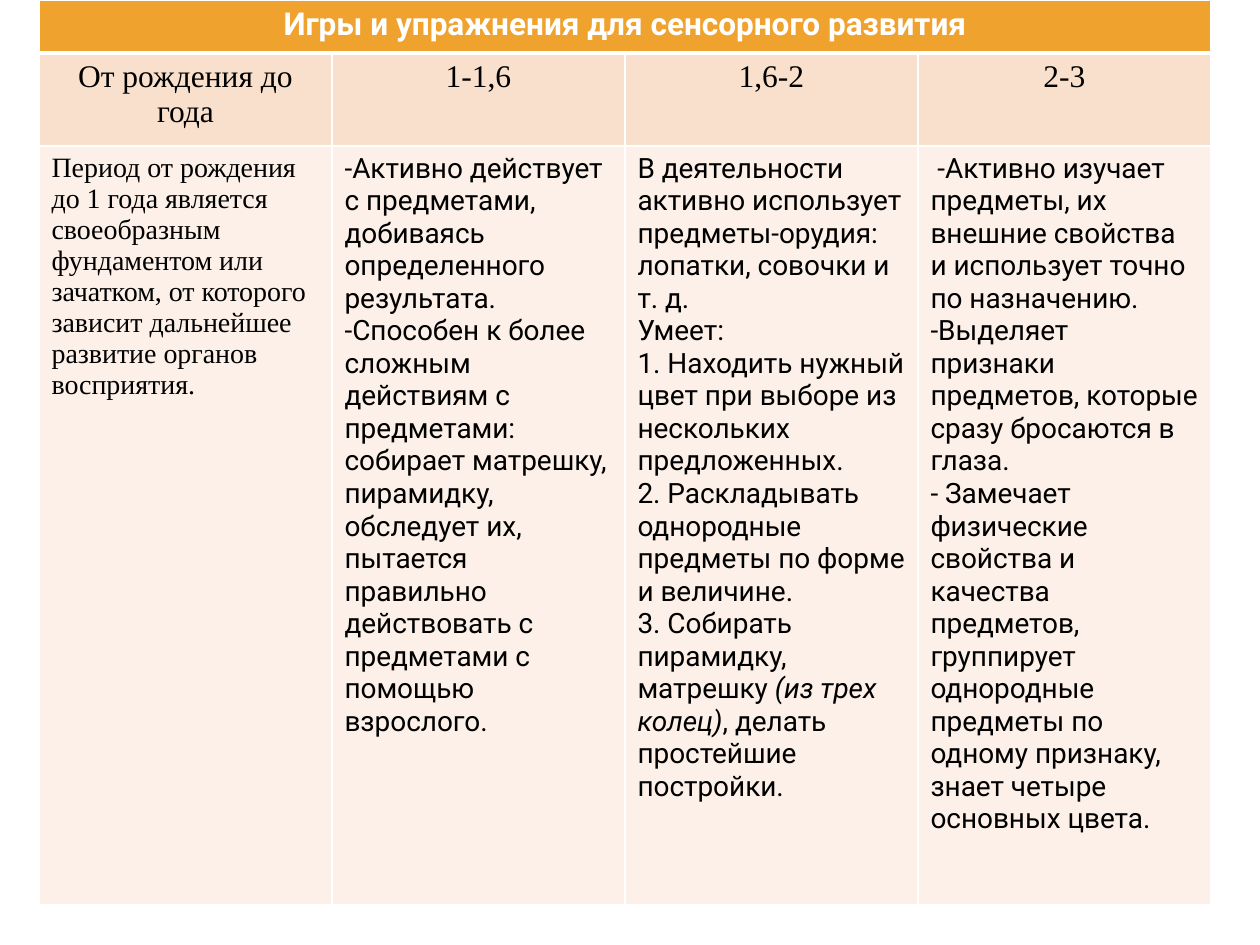
from lxml import etree
from pptx import Presentation
from pptx import util as u
from pptx.dml.color import RGBColor
from pptx.enum import text
from pptx.oxml.ns import qn

EMU_PER_PX = 914400 // 126
COLORS = {
    "white": "FFFFFF",
    "black": "000000",
    "heading": "F0A22E",
    "ages": "F9E0CD",
    "skills": "FCF0E8",
}
SANS, SERIF = "Roboto", "Times New Roman"

HEADING = "Игры и упражнения для сенсорного развития"
AGES = ["От рождения до года", "1-1,6", "1,6-2", "2-3"]
# One list of paragraphs per age; a tuple is plain, italic and plain text.
SKILLS = [
    ["Период от рождения до 1 года является своеобразным фундаментом или "
     "зачатком, от которого зависит дальнейшее развитие органов восприятия."],
    ["-Активно действует с предметами, добиваясь определенного результата.",
     "-Способен к более сложным действиям с предметами: собирает матрешку, "
     "пирамидку, обследует их, пытается правильно действовать с предметами "
     "с помощью взрослого."],
    ["В деятельности активно использует предметы-орудия: лопатки, совочки и т. д.",
     "Умеет:",
     "1. Находить нужный цвет при выборе из нескольких предложенных.",
     "2. Раскладывать однородные предметы по форме и величине.",
     ("3. Собирать пирамидку, матрешку ", "(из трех колец)",
      ", делать простейшие постройки.")],
    [" -Активно изучает предметы, их внешние свойства и использует точно "
     "по назначению.",
     "-Выделяет признаки предметов, которые сразу бросаются в глаза.",
     "- Замечает физические свойства и качества предметов, группирует "
     "однородные предметы по одному признаку, знает четыре основных цвета."],
]


def px(length):
    return u.Emu(length * EMU_PER_PX)


class SlideBuilder:
    def __init__(self, slide, colors):
        self.slide = slide
        self.colors = colors

    def rgb(self, name):
        return RGBColor.from_string(self.colors[name])

    def table(self, left, top, column_width, columns, row_heights):
        frame = self.slide.shapes.add_table(
            len(row_heights), columns, px(left), px(top),
            px(column_width * columns), px(sum(row_heights)))
        table = frame.table
        table.first_row = table.horz_banding = False
        for column in table.columns:
            column.width = px(column_width)
        for row, height in zip(table.rows, row_heights):
            row.height = px(height)
        return table

    def borders(self, cell, **widths):
        """Draw white cell borders; widths are points by side L, R, T, B."""
        properties = cell._tc.get_or_add_tcPr()
        for side in "LRTB":
            line = etree.SubElement(properties, qn(f"a:ln{side}"),
                                    w=str(u.Pt(widths.get(side, 1))))
            fill = etree.SubElement(line, qn("a:solidFill"))
            etree.SubElement(fill, qn("a:srgbClr"), val=self.colors["white"])

    def cell(self, cell, fill, **border_widths):
        self.borders(cell, **border_widths)
        cell.fill.solid()
        cell.fill.fore_color.rgb = self.rgb(fill)

    def paragraphs(self, cell, contents, font, size, color="black", bold=False,
                   align=text.PP_ALIGN.LEFT):
        frame = cell.text_frame
        for index, content in enumerate(contents):
            paragraph = frame.add_paragraph() if index else frame.paragraphs[0]
            paragraph.alignment = align
            paragraph.font.name = font
            paragraph.font.size = u.Pt(size)
            paragraph.font.bold = bold
            paragraph.font.color.rgb = self.rgb(color)
            pieces = (content,) if isinstance(content, str) else content
            for position, piece in enumerate(pieces):
                run = paragraph.add_run()
                run.text = piece
                if position == 1:
                    run.font.italic = True


def main():
    presentation = Presentation()
    presentation.slide_width, presentation.slide_height = px(1260), px(945)
    slide = presentation.slides.add_slide(presentation.slide_layouts[6])
    builder = SlideBuilder(slide, COLORS)

    table = builder.table(39, 0, 293, len(AGES), [53, 93, 759])
    centre = text.PP_ALIGN.CENTER
    for column, (age, skills) in enumerate(zip(AGES, SKILLS)):
        heading_cell, age_cell, skills_cell = (
            table.cell(row, column) for row in range(3))
        builder.cell(heading_cell, "heading", B=3)
        builder.cell(age_cell, "ages", T=3)
        builder.cell(skills_cell, "skills")
        builder.paragraphs(age_cell, [age], SERIF, 18, align=centre)
        builder.paragraphs(skills_cell, skills, SANS if column else SERIF, 16)

    table.cell(0, 0).merge(table.cell(0, len(AGES) - 1))
    builder.paragraphs(table.cell(0, 0), [HEADING], SANS, 18, "white", True, centre)
    presentation.save("out.pptx")


if __name__ == "__main__":
    main()
